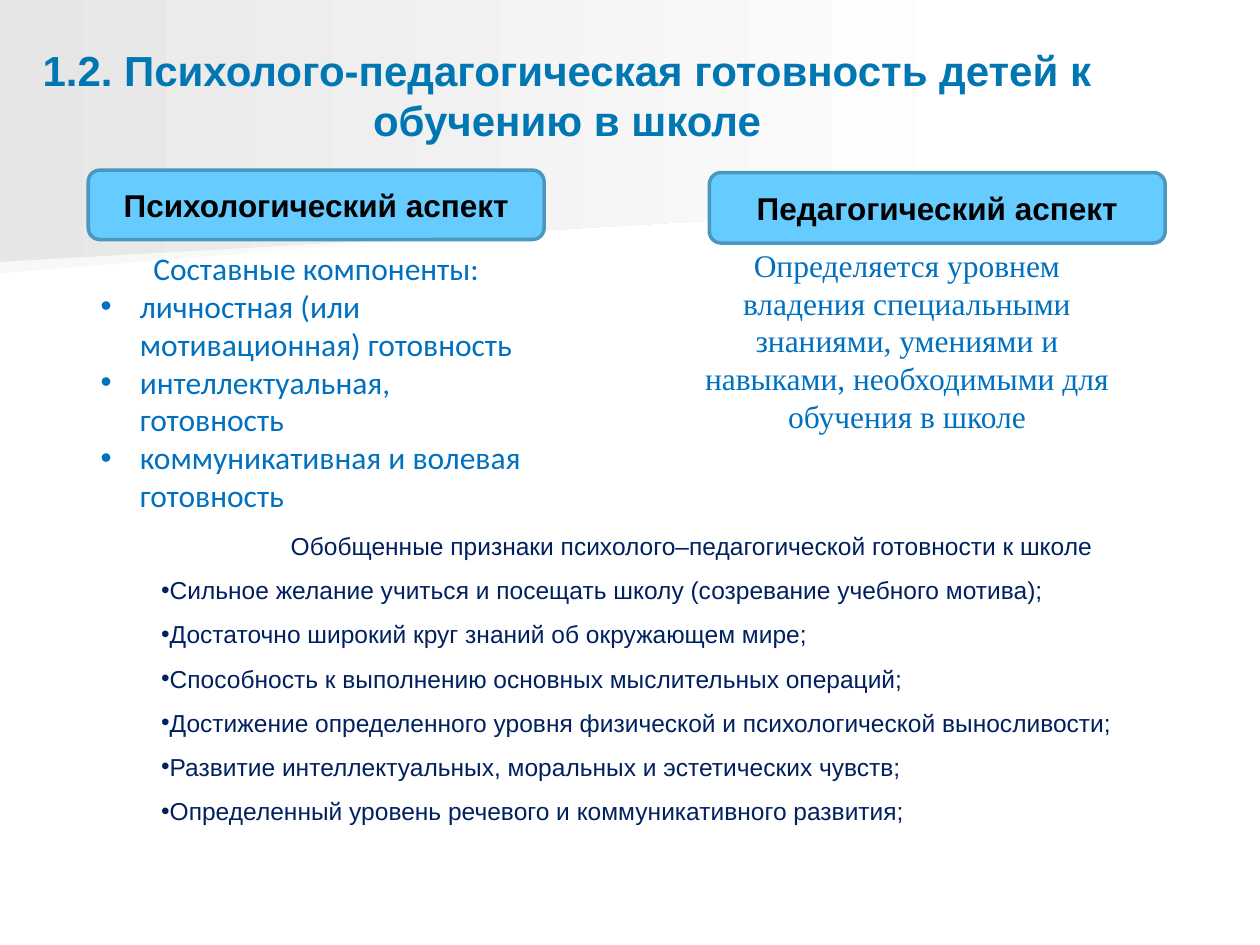
import pptx
import pptx.dml.color
import pptx.enum.shapes
import pptx.enum.text
import pptx.oxml
import pptx.oxml.ns
import pptx.util

Cm = pptx.util.Cm
ALIGN = pptx.enum.text.PP_ALIGN
ANCHOR = pptx.enum.text.MSO_ANCHOR
COLORS = {
    "title": "0077B2", "label": "000000", "aspect": "0070C0", "signs": "002060",
    "panel": "66CCFF", "border": "4B97BD",
    "band": "F8F8F8", "wedge": "E6E6E6", "fade": "FFFFFF",
}
COMPONENTS = [
    "личностная (или мотивационная) готовность",
    "интеллектуальная, готовность",
    "коммуникативная и волевая готовность",
]
SIGNS = [
    "Сильное желание учиться и посещать школу (созревание учебного мотива);",
    "Достаточно широкий круг знаний об окружающем мире;",
    "Способность к выполнению основных мыслительных операций;",
    "Достижение определенного уровня физической и психологической выносливости;",
    "Развитие интеллектуальных, моральных и эстетических чувств;",
    "Определенный уровень речевого и коммуникативного развития;",
]


def rgb(name):
    """Return the named palette colour."""
    return pptx.dml.color.RGBColor.from_string(COLORS[name])


def write(frame, text, *, size, color, font="Arial", bold=False, align=ALIGN.CENTER,
          spacing=None, margin=0, indent=0, bullet=False):
    """Write one paragraph, using the frame's empty first one when there is one."""
    paragraph = frame.add_paragraph() if frame.text else frame.paragraphs[0]
    run = paragraph.add_run()
    run.text = text
    run.font.name, run.font.size, run.font.bold = font, pptx.util.Pt(size), bold
    run.font.color.rgb = rgb(color)
    paragraph.alignment = align
    if spacing:
        paragraph.line_spacing = spacing
    properties = paragraph._p.get_or_add_pPr()
    properties.set("marL", str(Cm(margin)))
    properties.set("indent", str(Cm(indent)))
    if bullet:
        namespace = pptx.oxml.ns.nsdecls("a")
        for tag in (f'<a:buFont {namespace} typeface="Arial"/>', f'<a:buChar {namespace} char="•"/>'):
            properties.append(pptx.oxml.parse_xml(tag))


def text_box(slide, left, top, width, height):
    """Add a wrapping text box that grows with its text and return its frame."""
    frame = slide.shapes.add_textbox(Cm(left), Cm(top), Cm(width), Cm(height)).text_frame
    frame.word_wrap = True
    frame.auto_size = pptx.enum.text.MSO_AUTO_SIZE.SHAPE_TO_FIT_TEXT
    return frame


def backdrop(slide, points, color):
    """Draw a borderless outline that fades to white on the right."""
    start, *others = [(Cm(x), Cm(y)) for x, y in points]
    builder = slide.shapes.build_freeform(*start)
    builder.add_line_segments(others, close=True)
    outline = builder.convert_to_shape()
    outline.shadow.inherit = False
    outline.line.fill.background()
    outline.fill.gradient()
    outline.fill.gradient_angle = 0
    for stop, name in zip(outline.fill.gradient_stops, (color, "fade")):
        stop.color.rgb = rgb(name)


def heading(slide, text, left, top, width, height):
    """Place the slide title in front of the backdrop."""
    title = slide.shapes.title
    slide.shapes._spTree.append(title._element)
    title.left, title.top, title.width, title.height = Cm(left), Cm(top), Cm(width), Cm(height)
    title.text_frame.vertical_anchor = ANCHOR.TOP
    write(title.text_frame, text, size=24, color="title", bold=True)


def aspect(slide, label, left, top, width, height, shift, drop, body_height):
    """Draw a labelled panel and return the frame of the text below it."""
    panel = slide.shapes.add_shape(pptx.enum.shapes.MSO_SHAPE.ROUNDED_RECTANGLE,
                                   Cm(left), Cm(top), Cm(width), Cm(height))
    panel.shadow.inherit = False
    panel.fill.solid()
    panel.fill.fore_color.rgb = rgb("panel")
    panel.line.color.rgb = rgb("border")
    panel.line.width = pptx.util.Pt(2)
    panel.text_frame.word_wrap = True
    panel.text_frame.vertical_anchor = ANCHOR.MIDDLE
    write(panel.text_frame, label, size=18, color="label", bold=True)
    return text_box(slide, left + shift, top + drop, width, body_height)


def summary(slide, left, top, width, height):
    """List the general signs of readiness for school."""
    frame = text_box(slide, left, top, width, height)
    style = dict(size=14, color="signs", spacing=1.5, indent=1.25)
    write(frame, "Обобщенные признаки психолого–педагогической готовности к школе", **style)
    for sign in SIGNS:
        write(frame, sign, align=ALIGN.JUSTIFY, bullet=True, **style)


def main():
    """Build and save the slide."""
    deck = pptx.Presentation()
    deck.slide_width, deck.slide_height = Cm(25.4), Cm(19.05)
    slide = deck.slides.add_slide(deck.slide_layouts[5])
    backdrop(slide, [(19.76, 3.89), (0, 5.51), (0, 2.57), (19.79, 2.57)], "band")
    backdrop(slide, [(20.12, 4.11), (0, 5.28), (0, 0), (20.12, 0)], "wedge")
    heading(slide, "1.2. Психолого-педагогическая готовность детей к обучению в школе",
            0, 0.76, 22.86, 3.18)

    pedagogical = aspect(slide, "Педагогический аспект", 14.3, 3.48, 9.19, 1.42,
                         shift=-0.61, drop=1.35, body_height=4.09)
    write(pedagogical, "Определяется уровнем владения специальными знаниями, умениями и "
          "навыками, необходимыми для обучения в школе",
          size=18, color="aspect", font="Times New Roman")

    psychological = aspect(slide, "Психологический аспект", 1.78, 3.43, 9.19, 1.4,
                           shift=0, drop=1.47, body_height=5.64)
    style = dict(size=18, color="aspect", font="Calibri")
    write(psychological, "Составные компоненты:", **style)
    for component in COMPONENTS:
        write(psychological, component, align=ALIGN.LEFT, margin=0.79, indent=-0.79,
              bullet=True, **style)

    summary(slide, 1.75, 10.29, 23.14, 6.53)
    deck.save("out.pptx")


if __name__ == "__main__":
    main()
